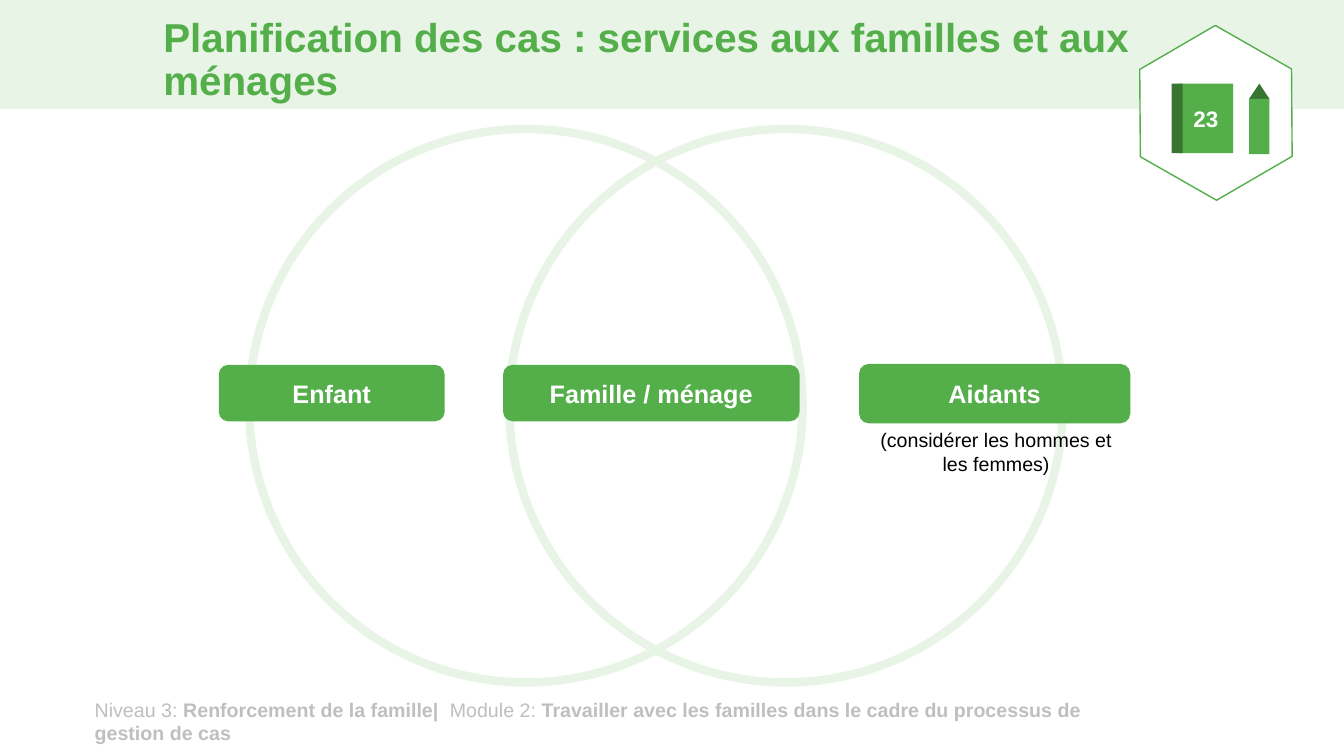
"""Build a slide of two linked circles on services to families and households."""
from dataclasses import dataclass

from pptx import Presentation
from pptx.dml.color import RGBColor
from pptx.enum.shapes import MSO_SHAPE
from pptx.enum.text import MSO_ANCHOR, PP_ALIGN
from pptx.util import Inches, Pt

RECT, ROUND, OVAL = MSO_SHAPE.RECTANGLE, MSO_SHAPE.ROUNDED_RECTANGLE, MSO_SHAPE.OVAL
HEXAGON, TRIANGLE = MSO_SHAPE.HEXAGON, MSO_SHAPE.ISOSCELES_TRIANGLE
LEFT, CENTER = PP_ALIGN.LEFT, PP_ALIGN.CENTER
MIDDLE, TOP = MSO_ANCHOR.MIDDLE, MSO_ANCHOR.TOP
TITLE_ONLY = 5


@dataclass(frozen=True)
class Theme:
    """Hold the colours, font and type sizes."""
    green: str = "54AF4B"
    dark: str = "387532"
    pale: str = "E8F4E6"
    gray: str = "BFBFBF"
    white: str = "FFFFFF"
    black: str = "000000"
    font: str = "Arial"
    title: float = 28.8
    label: float = 18
    badge: float = 16
    note: float = 14


THEME = Theme()


def place(item, box):
    """Set the left, top, width and height of an item."""
    item.left, item.top, item.width, item.height = map(Inches, box)


def style(run, size, color, bold):
    """Set the font of a run."""
    font = run.font
    font.name, font.size, font.bold = THEME.font, Pt(size), bold
    font.color.rgb = RGBColor.from_string(color)


def write(item, text, size, color, bold=True, align=CENTER, anchor=MIDDLE):
    """Put one formatted paragraph in an item."""
    frame = item.text_frame
    frame.text = text
    frame.word_wrap, frame.vertical_anchor = True, anchor
    para = frame.paragraphs[0]
    para.alignment = align
    style(para.runs[0], size, color, bold)


def add_form(shapes, kind, box, fill=None, line=None, weight=1):
    """Add a flat preset shape."""
    form = shapes.add_shape(kind, *map(Inches, box))
    form.shadow.inherit = False
    if fill:
        form.fill.solid()
        form.fill.fore_color.rgb = RGBColor.from_string(fill)
    else:
        form.fill.background()
    if line:
        form.line.color.rgb = RGBColor.from_string(line)
        form.line.width = Pt(weight)
    else:
        form.line.fill.background()
    return form


def add_title(slide, text):
    """Set the title on a pale band."""
    band = add_form(slide.shapes, RECT, (0, 0, 13.33, 1.08), THEME.pale)
    title = slide.shapes.title
    title._element.addprevious(band._element)
    place(title, (1.52, 0.13, 10.9, 0.95))
    write(title, text, THEME.title, THEME.green, align=LEFT)
    title.text_frame.paragraphs[0].line_spacing = 0.9


def add_foot(slide, parts):
    """Add the footer, with every second part bold."""
    foot = slide.shapes.add_textbox(*map(Inches, (0.84, 6.87, 10.62, 0.57)))
    foot.text_frame.word_wrap = True
    for index, part in enumerate(parts):
        run = foot.text_frame.paragraphs[0].add_run()
        run.text = part
        style(run, THEME.note, THEME.gray, index % 2 == 1)


def add_badge(slide, number):
    """Add the hexagon with a numbered book and a pencil."""
    group = slide.shapes.add_group_shape().shapes
    frame = add_form(group, HEXAGON, (11.19, 0.37, 1.74, 1.5), THEME.white, THEME.green)
    frame.adjustments[0] = 0.29
    frame.rotation = 29.7
    book = add_form(group, RECT, (11.69, 0.83, 0.54, 0.69), THEME.green)
    write(book, number, THEME.badge, THEME.white)
    book.text_frame.word_wrap = False
    add_form(group, RECT, (11.62, 0.83, 0.11, 0.69), THEME.dark)
    add_form(group, TRIANGLE, (12.39, 0.83, 0.2, 0.15), THEME.dark)
    add_form(group, RECT, (12.39, 0.98, 0.2, 0.55), THEME.green)


def add_label(slide, text, box):
    """Add a rounded green label."""
    label = add_form(slide.shapes, ROUND, box, THEME.green)
    write(label, text, THEME.label, THEME.white)


def add_note(slide, text, box):
    """Add a small centred note."""
    note = slide.shapes.add_textbox(*map(Inches, box))
    write(note, text, THEME.note, THEME.black, bold=False, anchor=TOP)


def main():
    """Build and save the slide."""
    deck = Presentation()
    deck.slide_width, deck.slide_height = Inches(13.33), Inches(7.5)
    slide = deck.slides.add_slide(deck.slide_layouts[TITLE_ONLY])
    add_title(slide, "Planification des cas : services aux familles et aux ménages")
    add_foot(slide, (
        "Niveau 3: ", "Renforcement de la famille|  ", "Module 2: ",
        "Travailler avec les familles dans le cadre du processus de gestion de cas",
    ))
    add_badge(slide, "23")
    for left in (2.47, 5.05):
        add_form(slide.shapes, OVAL, (left, 1.28, 5.49, 5.49), line=THEME.pale, weight=6)
    for text, box in (
        ("Enfant", (2.17, 3.62, 2.24, 0.56)),
        ("Famille / ménage", (4.99, 3.62, 2.94, 0.56)),
        ("Aidants", (8.52, 3.61, 2.69, 0.59)),
    ):
        add_label(slide, text, box)
    add_note(slide, "(considérer les hommes et les femmes)", (8.52, 4.2, 2.72, 0.34))
    deck.save("out.pptx")


if __name__ == "__main__":
    main()
